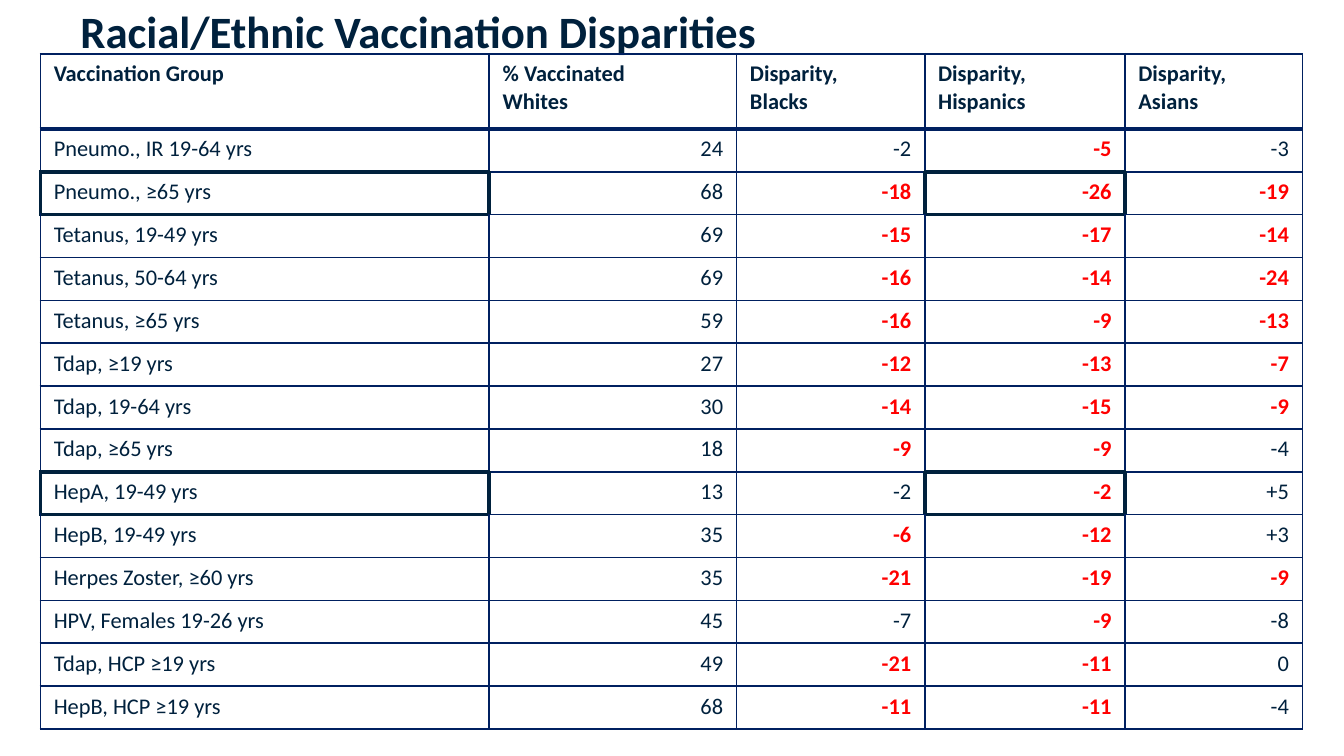
import pptx
import pptx.dml.color
import pptx.enum.text
import pptx.util
from lxml import etree
from pptx.oxml.ns import qn

Pt = pptx.util.Pt
RGBColor = pptx.dml.color.RGBColor
PP_ALIGN = pptx.enum.text.PP_ALIGN

INK = RGBColor(0x00, 0x21, 0x3D)
GRID = RGBColor(0x00, 0x20, 0x60)
SIGNIFICANT = RGBColor(0xFF, 0x00, 0x00)
FONT = "Calibri"

COLUMN_WIDTHS = [240.5, 132.5, 100.8, 107.3, 95]
HEADER_HEIGHT = 40.3
HEADINGS = ["Vaccination Group", "% Vaccinated\nWhites", "Disparity,\nBlacks",
            "Disparity,\nHispanics", "Disparity, Asians"]
SIGNIFICANT_MARK = "*"
GROUPS = [
    ["Pneumo., IR 19-64 yrs", "24", "-2", "-5*", "-3"],
    ["Pneumo., ≥65 yrs", "68", "-18*", "-26*", "-19*"],
    ["Tetanus, 19-49 yrs", "69", "-15*", "-17*", "-14*"],
    ["Tetanus, 50-64 yrs", "69", "-16*", "-14*", "-24*"],
    ["Tetanus, ≥65 yrs", "59", "-16*", "-9*", "-13*"],
    ["Tdap, ≥19 yrs", "27", "-12*", "-13*", "-7*"],
    ["Tdap, 19-64 yrs", "30", "-14*", "-15*", "-9*"],
    ["Tdap, ≥65 yrs", "18", "-9*", "-9*", "-4"],
    ["HepA, 19-49 yrs", "13", "-2", "-2*", "+5"],
    ["HepB, 19-49 yrs", "35", "-6*", "-12*", "+3"],
    ["Herpes Zoster, ≥60 yrs", "35", "-21*", "-19*", "-9*"],
    ["HPV, Females 19-26 yrs", "45", "-7", "-9*", "-8"],
    ["Tdap, HCP ≥19 yrs", "49", "-21*", "-11*", "0"],
    ["HepB, HCP ≥19 yrs", "68", "-11*", "-11*", "-4"],
]
OUTLINED = {(row, column) for row in (2, 9) for column in (0, 3)}
SIDES = {"lnL": (0, -1), "lnR": (0, 1), "lnT": (-1, 0), "lnB": (1, 0)}


def style_font(font, size, color, bold):
    font.name = FONT
    font.size = Pt(size)
    font.bold = bold
    font.color.rgb = color


def add_title(slide, left, top, width, height):
    title = slide.shapes.add_textbox(Pt(left), Pt(top), Pt(width), Pt(height))
    frame = title.text_frame
    frame.word_wrap = True
    frame.vertical_anchor = pptx.enum.text.MSO_ANCHOR.BOTTOM
    frame.text = "Racial/Ethnic Vaccination Disparities"
    frame.paragraphs[0].line_spacing = Pt(30)
    style_font(frame.paragraphs[0].runs[0].font, 24, INK, True)


def draw_borders(cell, row, column):
    properties = cell._tc.get_or_add_tcPr()
    for side, (down, across) in SIDES.items():
        color, weight = GRID, 1
        if OUTLINED & {(row, column), (row + down, column + across)}:
            color, weight = INK, 2.25
        elif row == 0 and side == "lnB":
            weight = 2
        line = etree.SubElement(properties, qn(f"a:{side}"), w=str(Pt(weight)))
        fill = etree.SubElement(line, qn("a:solidFill"))
        etree.SubElement(fill, qn("a:srgbClr"), val=str(color))


def fill_cell(cell, row, column, entry):
    significant = entry.endswith(SIGNIFICANT_MARK)
    cell.text_frame.text = entry.rstrip(SIGNIFICANT_MARK)
    for paragraph in cell.text_frame.paragraphs:
        if row and column:
            paragraph.alignment = PP_ALIGN.RIGHT
        for run in paragraph.runs:
            style_font(run.font, 12, SIGNIFICANT if significant else INK,
                       row == 0 or significant)
    draw_borders(cell, row, column)
    cell.fill.background()


def add_disparity_table(slide, left, top, width, height):
    entries = [HEADINGS] + GROUPS
    table = slide.shapes.add_table(len(entries), len(HEADINGS), Pt(left), Pt(top),
                                   Pt(width), Pt(height)).table
    table.horz_banding = False
    for column, share in zip(table.columns, COLUMN_WIDTHS):
        column.width = Pt(width * share / sum(COLUMN_WIDTHS))
    group_height = (height - HEADER_HEIGHT) / len(GROUPS)
    for row, row_entries in enumerate(entries):
        table.rows[row].height = Pt(group_height if row else HEADER_HEIGHT)
        for column, entry in enumerate(row_entries):
            fill_cell(table.cell(row, column), row, column, entry)


def main():
    presentation = pptx.Presentation()
    presentation.slide_width = Pt(720)
    presentation.slide_height = Pt(405)
    slide = presentation.slides.add_slide(presentation.slide_layouts[6])
    add_title(slide, 36, 2.9, 648, 31.7)
    add_disparity_table(slide, 21.6, 28.8, 676.1, 361.8)
    presentation.save("out.pptx")


if __name__ == "__main__":
    main()
